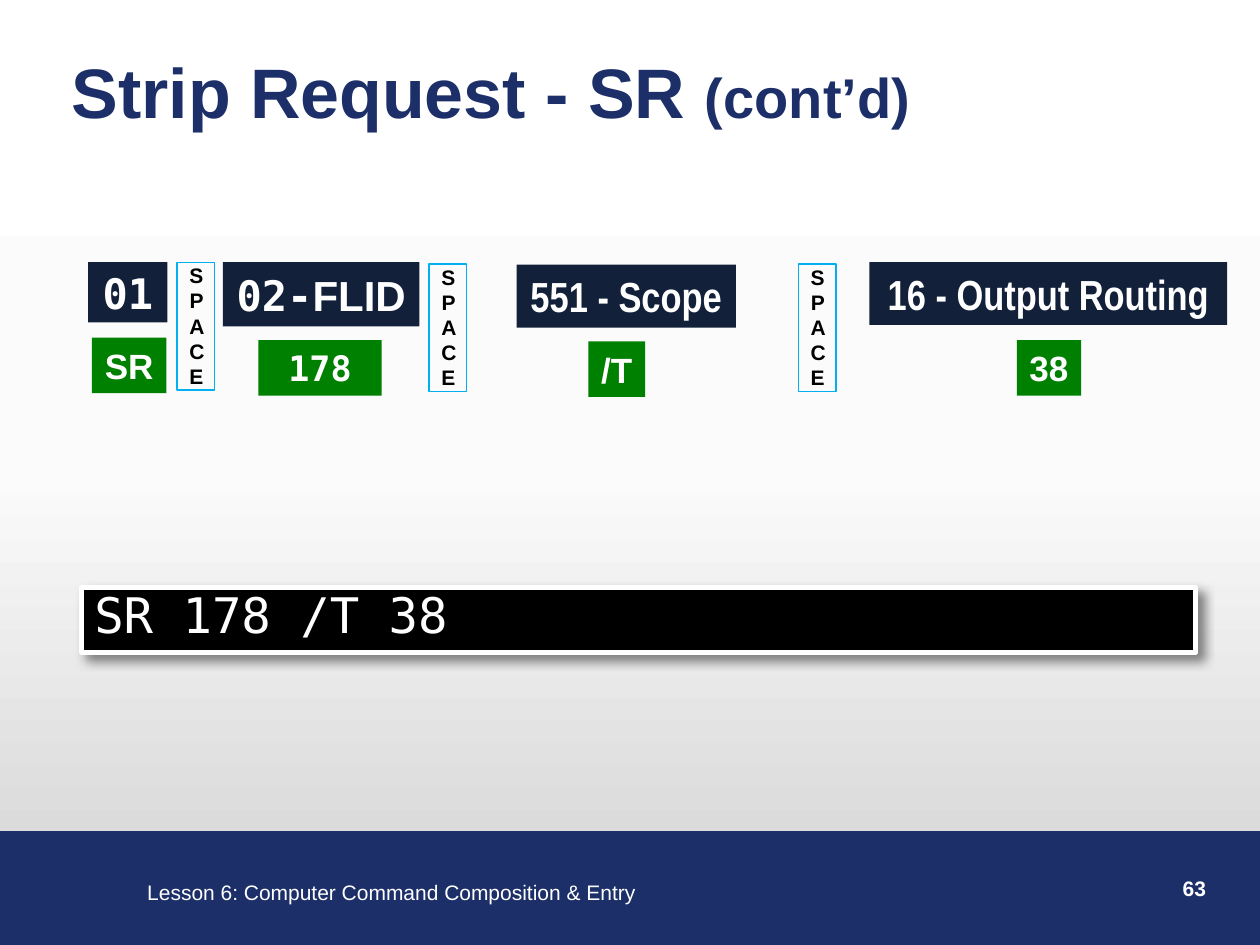
from lxml import etree
from pptx import Presentation, util as u
from pptx.dml.color import RGBColor
from pptx.enum import shapes, text
from pptx.oxml.ns import qn

CELL = 0.1  # grid of 100 columns by 75 rows, in inches
COLS, ROWS = 100, 75

HUES = {
    "navy": "1D2F68", "dark": "122039", "green": "008000", "sky": "00B0F0",
    "white": "FFFFFF", "black": "000000", "gray": "808080",
    "pale": "FBFBFB", "ash": "D0D0D0",
}
SANS, SLIM, MONO = "Arial", "Arial Narrow", "DejaVu Sans Mono"
MID = text.MSO_ANCHOR.MIDDLE
CENTER, RIGHT = text.PP_ALIGN.CENTER, text.PP_ALIGN.RIGHT

# centre column, label row, label width, label height, label runs
LABELS = [
    (10.15, 20.8, 6.3, 4.8, [("01", MONO)]),
    (25.5, 20.8, 15.6, 5.1, [("02-", MONO), ("FLID", SANS)]),
    (49.7, 21, 17.4, 5, [("551 - Scope", SLIM)]),
    (83.2, 20.8, 28.4, 5, [("16 - Output Routing", SLIM)]),
]
# centre column, value row, value width, value, font
VALUES = [
    (10.25, 26.8, 5.9, "SR", SANS),
    (25.4, 27, 9.8, "178", MONO),
    (48.95, 27.1, 4.5, "/T", SANS),
    (83.25, 27, 5.1, "38", SANS),
]
GAPS = [(15.55, 25.9), (35.55, 26), (64.85, 26)]  # centres of the SPACE marks


def hue(name):
    return RGBColor.from_string(HUES[name])


def grid(*cells):
    return [u.Inches(n * CELL) for n in cells]


def node(parent, tag, **attrs):
    return etree.SubElement(parent, qn(tag), {k: str(v) for k, v in attrs.items()})


def write(shape, runs, size, color="white", bold=True, align=None, anchor=None,
          wrap=True, pad=(0.1, 0.05, 0.1, 0.05), lead=None):
    """Fill a shape with one paragraph; runs hold text, font and maybe a size."""
    frame = shape.text_frame
    frame.word_wrap = wrap
    frame.vertical_anchor = anchor or text.MSO_ANCHOR.TOP
    (frame.margin_left, frame.margin_top,
     frame.margin_right, frame.margin_bottom) = [u.Inches(n) for n in pad]
    para = frame.paragraphs[0]
    para.alignment = align or text.PP_ALIGN.LEFT
    if lead:
        para.line_spacing = u.Pt(lead)
    for words, face, *own in runs:
        run = para.add_run()
        run.text = words
        run.font.name, run.font.bold = face, bold
        run.font.size = u.Pt(own[0] if own else size)
        run.font.color.rgb = hue(color)


def box(slide, cells, fill=None, line=None, width=0.75):
    shape = slide.shapes.add_shape(shapes.MSO_SHAPE.RECTANGLE, *grid(*cells))
    shape.shadow.inherit = False
    if fill:
        shape.fill.solid()
        shape.fill.fore_color.rgb = hue(fill)
    else:
        shape.fill.background()
    if line:
        shape.line.color.rgb = hue(line)
        shape.line.width = u.Pt(width)
    else:
        shape.line.fill.background()
    return shape


def note(slide, cells, runs, size, **form):
    write(slide.shapes.add_textbox(*grid(*cells)), runs, size, **form)


def tag(slide, mid, top, wide, high, fill, runs, size):
    """Draw a filled box centred on a column."""
    shape = box(slide, (mid - wide / 2, top, wide, high), fill)
    write(shape, runs, size, align=CENTER, anchor=MID, wrap=False)


def gap(slide, mid, row):
    """Draw a SPACE mark: the turned text breaks after each letter."""
    long, thin = 10.1, 3
    shape = box(slide, (mid - long / 2, row - thin / 2, long, thin), line="sky")
    shape.rotation = 270
    write(shape, [("SPACE", SANS)], 12, color="black", align=CENTER,
          pad=(0, 0.05, 0, 0.05))
    shape.text_frame._txBody.bodyPr.set("vert", "vert")


def shade(shape):
    glow = shape._element.spPr.find(qn("a:effectLst"))
    drop = node(glow, "a:outerShdw", blurRad=u.Pt(6), dist=u.Pt(5),
                dir=45 * 60000, algn="tl", rotWithShape=0)
    node(drop, "a:srgbClr", val=HUES["gray"])


def backdrop(slide):
    fill = slide.background.fill
    fill.gradient()
    fill.gradient_angle = 270
    stops = fill._fill._gradFill.find(qn("a:gsLst"))
    for stop in list(stops):
        stops.remove(stop)
    for pos, name in ((0, "white"), (50, "pale"), (100, "ash")):
        node(node(stops, "a:gs", pos=pos * 1000), "a:srgbClr", val=HUES[name])


def footer(slide):
    box(slide, (-0.2, 66, COLS + 0.2, ROWS - 66), "navy", "navy")
    note(slide, (10.7, 69.3, 41.1, 3),
         [("Lesson 6: Computer Command Composition & Entry", SANS)], 12,
         bold=False, wrap=False)
    note(slide, (75.9, 69, 20.8, 5), [("63", SANS)], 12, align=RIGHT)


def entry(slide):
    shape = box(slide, (6.5, 46.6, 88.4, 5.2), "black", "white", 3)
    shade(shape)
    write(shape, [("SR 178 /T 38", MONO)], 28, bold=False, lead=25,
          pad=(0.1, 0.1, 0.1, 0.05))


def main():
    deck = Presentation()
    deck.slide_width, deck.slide_height = grid(COLS, ROWS)
    slide = deck.slides.add_slide(deck.slide_layouts[6])
    backdrop(slide)
    footer(slide)
    note(slide, (4.7, 3.8, 92.7, 6.7),
         [("Strip Request - SR ", SANS), ("(cont’d)", SANS, 32)], 40,
         color="navy", anchor=MID)
    for mid, top, wide, high, runs in LABELS:
        tag(slide, mid, top, wide, high, "dark", runs, 24)
    for mid, top, wide, word, face in VALUES:
        tag(slide, mid, top, wide, 4.4, "green", [(word, face)], 20)
    for mid, row in GAPS:
        gap(slide, mid, row)
    entry(slide)
    deck.save("out.pptx")


if __name__ == "__main__":
    main()
